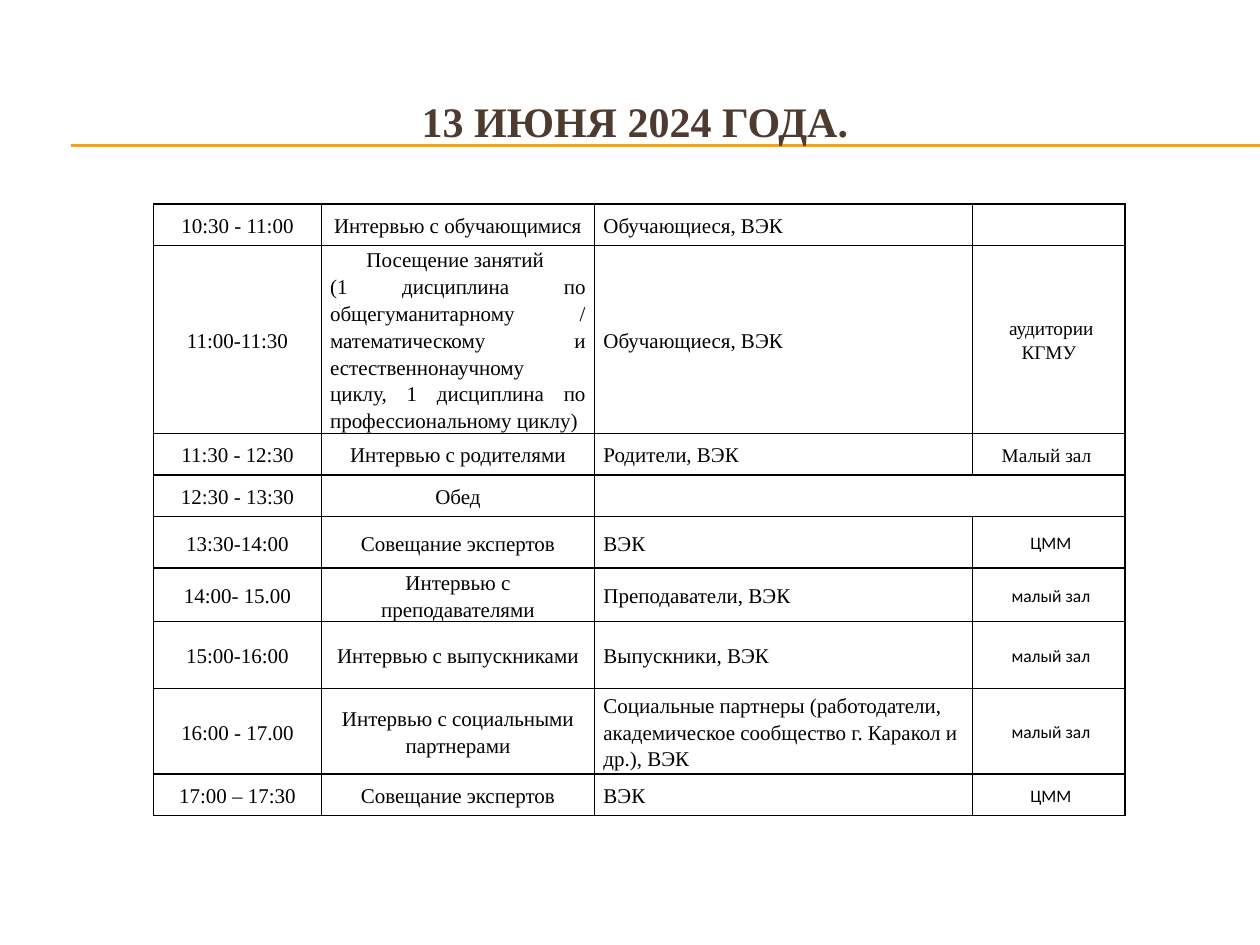
"""Builds a slide with the interview schedule for one day as a four-column table."""
import pptx
import pptx.util
import pptx.dml.color
import pptx.enum.shapes
import pptx.enum.text
import lxml.etree

Inches = pptx.util.Inches
Align = pptx.enum.text.PP_ALIGN
MIDDLE = pptx.enum.text.MSO_ANCHOR.MIDDLE
NAMESPACE = "http://schemas.openxmlformats.org/drawingml/2006/main"
THEME = {
    "accent": "F0A22E", "title": "4E3B30", "text": "000000",
    "serif": "Times New Roman", "sans": "Calibri",
    "title_size": 24, "body_size": 12, "room_size": 11, "small_size": 10,
}


def write_paragraph(paragraph, text, alignment, size, family, color, bold=False):
    paragraph.text = text
    paragraph.alignment = alignment
    formats = {"size": pptx.util.Pt(size), "name": family, "bold": bold}
    for name, value in formats.items():
        setattr(paragraph.runs[0].font, name, value)
    paragraph.runs[0].font.color.rgb = pptx.dml.color.RGBColor.from_string(color)


def add_borders(cell, color, width):
    properties = cell._tc.get_or_add_tcPr()
    for side in ("lnL", "lnR", "lnT", "lnB"):
        line = lxml.etree.SubElement(properties, f"{{{NAMESPACE}}}{side}", w=str(pptx.util.Pt(width)))
        fill = lxml.etree.SubElement(line, f"{{{NAMESPACE}}}solidFill")
        lxml.etree.SubElement(fill, f"{{{NAMESPACE}}}srgbClr", val=color)


presentation = pptx.Presentation()
presentation.slide_width, presentation.slide_height = Inches(10), Inches(7.5)
slide = presentation.slides.add_slide(presentation.slide_layouts[5])

for height in (1.15, 1.16):
    rule = slide.shapes.add_connector(
        pptx.enum.shapes.MSO_CONNECTOR.STRAIGHT,
        Inches(0.56), Inches(height), presentation.slide_width, Inches(height))
    rule.line.color.rgb = pptx.dml.color.RGBColor.from_string(THEME["accent"])
    rule.line.width = pptx.util.Pt(0.75)
    lxml.etree.SubElement(rule._element.spPr, f"{{{NAMESPACE}}}effectLst")

title = slide.shapes.title
title_box = {"left": 0.33, "top": 0.5, "width": 9.5, "height": 0.92}
for name, value in title_box.items():
    setattr(title, name, Inches(value))
title.text_frame.auto_size = pptx.enum.text.MSO_AUTO_SIZE.NONE
title.text_frame.vertical_anchor = MIDDLE
write_paragraph(title.text_frame.paragraphs[0], "13 ИЮНЯ 2024 ГОДА. ", Align.CENTER,
                THEME["title_size"], THEME["serif"], THEME["title"], True)
title.element.getparent().append(title.element)

lesson = ("Посещение занятий \n(1 дисциплина по общегуманитарному / математическому и "
          "естественнонаучному циклу, 1 дисциплина по профессиональному циклу)")
partners = "Социальные партнеры (работодатели, академическое сообщество г. Каракол и др.), ВЭК"
schedule = [
    (0.33, "10:30 - 11:00", "Интервью с обучающимися", "Обучающиеся, ВЭК", ""),
    (0.99, "11:00-11:30", lesson, "Обучающиеся, ВЭК", " аудитории КГМУ"),
    (0.33, "11:30 - 12:30", "Интервью с родителями", "Родители, ВЭК", "Малый зал "),
    (0.33, "12:30 - 13:30", "Обед", "", ""),
    (0.41, "13:30-14:00", "Совещание экспертов", "ВЭК", " ЦММ"),
    (0.33, "14:00- 15.00", "Интервью с преподавателями", "Преподаватели, ВЭК", " малый зал"),
    (0.53, "15:00-16:00", "Интервью с выпускниками", "Выпускники, ВЭК", " малый зал"),
    (0.68, "16:00 - 17.00", "Интервью с социальными партнерами", partners, " малый зал"),
    (0.33, "17:00 – 17:30", "Совещание экспертов", "ВЭК", " ЦММ"),
]
column_widths = (1.33, 2.17, 3, 1.21)
column_alignments = (Align.CENTER, Align.CENTER, Align.LEFT, Align.CENTER)
lunch_row = 3

table = slide.shapes.add_table(
    len(schedule), len(column_widths), Inches(1.22), Inches(1.62),
    Inches(sum(column_widths)), Inches(sum(entry[0] for entry in schedule))).table
table.first_row = table.horz_banding = False
for column, width in zip(table.columns, column_widths):
    column.width = Inches(width)

cell_format = {"margin_left": Inches(0.07), "margin_right": Inches(0.07),
               "margin_top": 0, "margin_bottom": 0, "vertical_anchor": MIDDLE}
for row_index, (height, *texts) in enumerate(schedule):
    table.rows[row_index].height = Inches(height)
    for column_index, text in enumerate(texts):
        cell = table.cell(row_index, column_index)
        for name, value in cell_format.items():
            setattr(cell, name, value)
        add_borders(cell, THEME["text"], 1)
        cell.fill.background()
        size, family = THEME["body_size"], THEME["serif"]
        if column_index == 3 and row_index < lunch_row:
            size = THEME["room_size"]
        elif column_index == 3:
            size, family = THEME["small_size"], THEME["sans"]
        for line_index, line in enumerate(text.split("\n") if text else []):
            paragraph = cell.text_frame.add_paragraph() if line_index else cell.text_frame.paragraphs[0]
            alignment = Align.JUSTIFY if line_index else column_alignments[column_index]
            write_paragraph(paragraph, line, alignment, size, family, THEME["text"])
            paragraph.line_spacing = 1.15
table.cell(lunch_row, 2).merge(table.cell(lunch_row, 3))

presentation.save("out.pptx")
